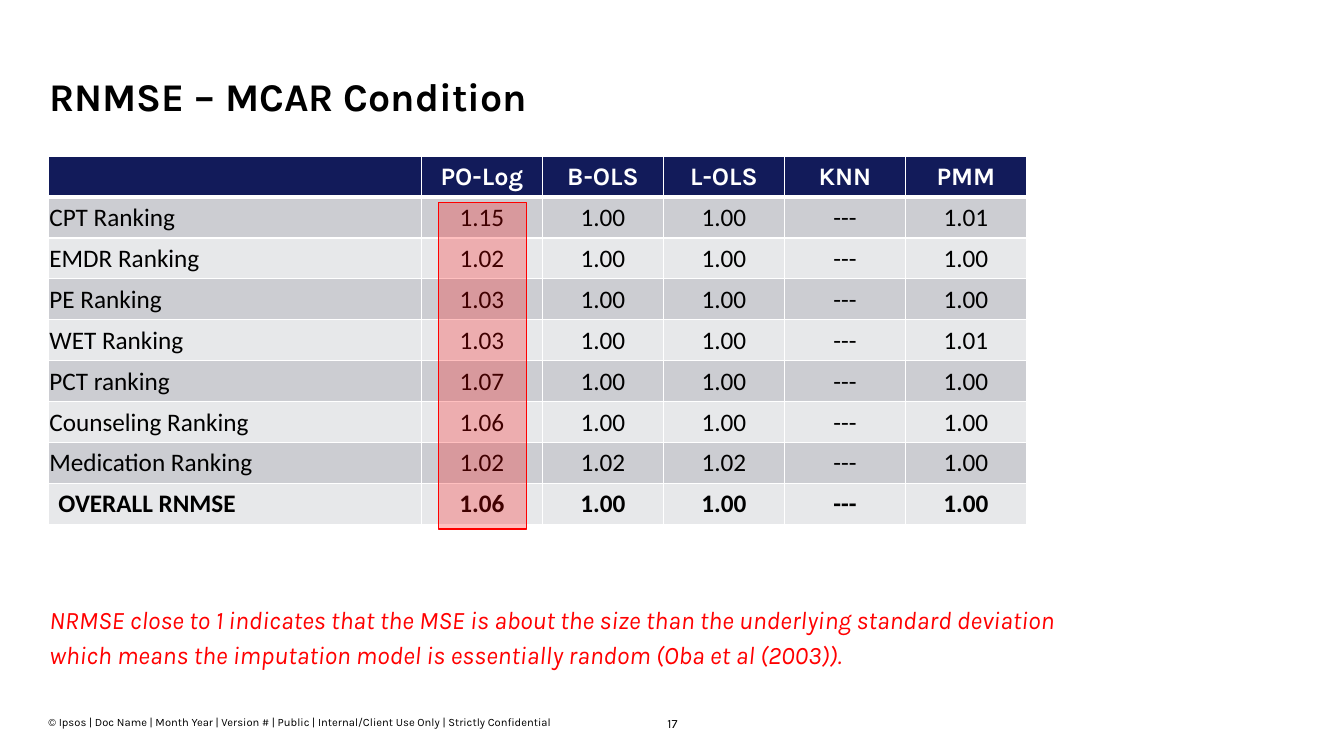
import pptx
import pptx.dml.color
import pptx.enum.shapes
import pptx.enum.text
import pptx.oxml
import pptx.oxml.ns
import pptx.util

PX = 9144
COLORS = {"black": "000000", "white": "FFFFFF", "red": "FF0000",
          "navy": "121B5A", "dark_band": "CCCDD2", "light_band": "E7E8EA"}
METHODS = ["PO-Log", "B-OLS", "L-OLS", "KNN", "PMM"]
RESULTS = [
    ("CPT Ranking", "1.15", "1.00", "1.00", "---", "1.01"),
    ("EMDR Ranking", "1.02", "1.00", "1.00", "---", "1.00"),
    ("PE Ranking", "1.03", "1.00", "1.00", "---", "1.00"),
    ("WET Ranking", "1.03", "1.00", "1.00", "---", "1.01"),
    ("PCT ranking", "1.07", "1.00", "1.00", "---", "1.00"),
    ("Counseling Ranking", "1.06", "1.00", "1.00", "---", "1.00"),
    ("Medication Ranking", "1.02", "1.02", "1.02", "---", "1.00"),
    ("OVERALL RNMSE", "1.06", "1.00", "1.00", "---", "1.00"),
]
NOTE = ("NRMSE close to 1 indicates that the MSE is about the size than the underlying "
        "standard deviation which means the imputation model is essentially random "
        "(Oba et al (2003)).")
FOOTER = ("© Ipsos | Doc Name | Month Year | Version # | Public | "
          "Internal/Client Use Only | Strictly Confidential")
ALIGN = pptx.enum.text.PP_ALIGN
ANCHOR = pptx.enum.text.MSO_ANCHOR


def rgb(name):
    """Return the named colour."""
    return pptx.dml.color.RGBColor.from_string(COLORS[name])


def write(frame, text, size, color="black", font="Karla", bold=False, italic=False,
          align=ALIGN.LEFT, spacing=1.0):
    """Write one formatted run into the first paragraph of a text frame."""
    paragraph = frame.paragraphs[0]
    paragraph.alignment = align
    paragraph.line_spacing = spacing
    run = paragraph.add_run()
    run.text = text
    run.font.name = font
    run.font.size = pptx.util.Pt(size)
    run.font.bold = bold
    run.font.italic = italic
    run.font.color.rgb = rgb(color)


def set_frame(frame, anchor=ANCHOR.TOP, wrap=True):
    """Remove the insets of a text frame and set its anchor and wrapping."""
    frame.margin_left = frame.margin_right = frame.margin_top = frame.margin_bottom = 0
    frame.auto_size = pptx.enum.text.MSO_AUTO_SIZE.NONE
    frame.vertical_anchor = anchor
    frame.word_wrap = wrap


def place_title(slide, left, top, width, height):
    """Place and fill the title placeholder."""
    title = slide.shapes.title
    title.left, title.top, title.width, title.height = (
        value * PX for value in (left, top, width, height))
    set_frame(title.text_frame)
    write(title.text_frame, "RNMSE – MCAR Condition", 28, bold=True, spacing=0.9)


def add_text(slide, box, text, size, anchor=ANCHOR.TOP, wrap=True, **style):
    """Add a text box without insets."""
    frame = slide.shapes.add_textbox(*(value * PX for value in box)).text_frame
    set_frame(frame, anchor, wrap)
    write(frame, text, size, **style)


def format_cell(cell, fill, bottom_width=1):
    """Give a cell white borders and a plain fill."""
    properties = cell._tc.get_or_add_tcPr()
    for side, width in (("L", 1), ("R", 1), ("T", 1), ("B", bottom_width)):
        properties.append(pptx.oxml.parse_xml(
            f'<a:ln{side} {pptx.oxml.ns.nsdecls("a")} w="{pptx.util.Pt(width)}">'
            f'<a:solidFill><a:srgbClr val="{COLORS["white"]}"/></a:solidFill></a:ln{side}>'))
    cell.fill.solid()
    cell.fill.fore_color.rgb = rgb(fill)


def add_results_table(slide, left, top, width, height):
    """Add the table of error values by ranking and method."""
    row_count, column_count = len(RESULTS) + 1, len(METHODS) + 1
    table = slide.shapes.add_table(
        row_count, column_count, left * PX, top * PX, width * PX, height * PX).table
    table.first_row = table.horz_banding = False
    method_width = 120
    table.columns[0].width = (width - method_width * len(METHODS)) * PX
    for column in range(1, column_count):
        table.columns[column].width = method_width * PX
    for row in table.rows:
        row.height = height * PX // row_count

    format_cell(table.cell(0, 0), "navy", 3)
    for column, method in enumerate(METHODS, 1):
        cell = table.cell(0, column)
        format_cell(cell, "navy", 3)
        cell.vertical_anchor = ANCHOR.BOTTOM
        write(cell.text_frame, method, 18, "white", bold=True, align=ALIGN.CENTER)

    for row, values in enumerate(RESULTS, 1):
        overall = row == len(RESULTS)
        for column, value in enumerate(values):
            cell = table.cell(row, column)
            format_cell(cell, "dark_band" if row % 2 else "light_band")
            cell.vertical_anchor = ANCHOR.MIDDLE
            if column or not overall:
                cell.margin_left = cell.margin_right = cell.margin_top = PX
                cell.margin_bottom = 0
            write(cell.text_frame, value, 18, font="Calibri", bold=overall,
                  align=ALIGN.CENTER if column else ALIGN.LEFT)


def add_highlight(slide, left, top, width, height):
    """Add the translucent red frame over one table column."""
    shape = slide.shapes.add_shape(
        pptx.enum.shapes.MSO_SHAPE.RECTANGLE, left * PX, top * PX, width * PX, height * PX)
    shape.shadow.inherit = False
    shape.fill.solid()
    shape.fill.fore_color.rgb = rgb("red")
    color = shape._element.spPr.find(
        pptx.oxml.ns.qn("a:solidFill")).find(pptx.oxml.ns.qn("a:srgbClr"))
    color.append(pptx.oxml.parse_xml(
        f'<a:alpha {pptx.oxml.ns.nsdecls("a")} val="25000"/>'))
    shape.line.color.rgb = rgb("red")
    shape.line.width = pptx.util.Pt(1)


def main():
    """Build and save the slide."""
    presentation = pptx.Presentation()
    presentation.slide_width = 1333 * PX
    presentation.slide_height = 750 * PX
    slide = presentation.slides.add_slide(presentation.slide_layouts[5])
    add_text(slide, (48, 710, 511, 13), FOOTER, 8, ANCHOR.BOTTOM, wrap=False)
    add_text(slide, (640, 709, 54, 15), "17", 9, align=ALIGN.CENTER, spacing=1.1)
    place_title(slide, 49, 77, 1236, 78)
    add_text(slide, (49, 595, 1010, 66), NOTE, 18, color="red", italic=True, spacing=1.15)
    add_results_table(slide, 48, 155, 970, 365)
    add_highlight(slide, 435, 201, 87, 324)
    presentation.save("out.pptx")


if __name__ == "__main__":
    main()
